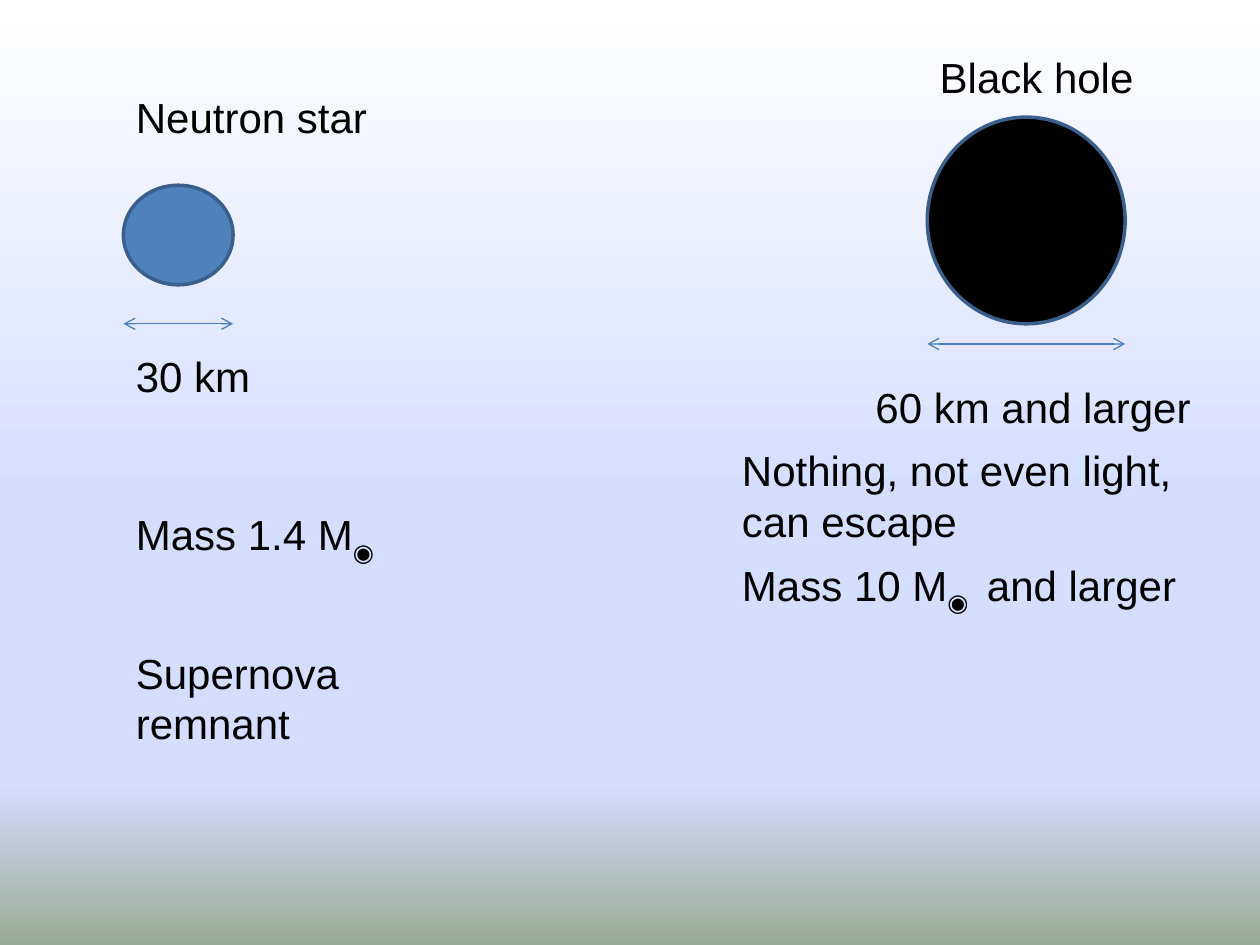
"""Build a slide that compares a neutron star with a black hole."""
from lxml import etree
from pptx import Presentation
from pptx import util as u
from pptx.dml.color import RGBColor
from pptx.enum import shapes, text
from pptx.oxml.ns import qn

BLACK = RGBColor(0x00, 0x00, 0x00)
STAR_BLUE = RGBColor(0x4F, 0x81, 0xBD)
OUTLINE_BLUE = RGBColor(0x3A, 0x5F, 0x8C)
ARROW_BLUE = RGBColor(0x4B, 0x7E, 0xBC)
SKY = RGBColor(0xD4, 0xDE, 0xFF)
SKY_STOPS = [
    (0, RGBColor(0xFF, 0xFF, 0xFF)),
    (53, SKY),
    (83, SKY),
    (100, RGBColor(0x96, 0xAB, 0x94)),
]
SUN = "◉"
STAR_LEFT = 0.98
HOLE_LEFT = 7.36
FACTS_LEFT = 5.79


def paint_background(slide, stops):
    """Fill the background with a gradient running from top to bottom."""
    fill = slide.background.fill
    fill.gradient()
    fill.gradient_angle = 270
    stop_list = next(slide.element.iter(qn("a:gsLst")))
    for old_stop in list(stop_list):
        stop_list.remove(old_stop)
    for percent, color in stops:
        stop = etree.SubElement(stop_list, qn("a:gs"), pos=str(percent * 1000))
        etree.SubElement(stop, qn("a:srgbClr"), val=str(color))


def add_label(slide, lines, left, top, width, height=0.5, size=24,
              font="Arial", color=BLACK):
    """Add a label; each line is a list of runs, those with the sun sign lowered."""
    label = slide.shapes.add_textbox(*map(u.Inches, (left, top, width, height)))
    frame = label.text_frame
    frame.word_wrap = False
    frame.auto_size = text.MSO_AUTO_SIZE.SHAPE_TO_FIT_TEXT
    for index, line in enumerate(lines):
        paragraph = frame.add_paragraph() if index else frame.paragraphs[0]
        for part in line:
            run = paragraph.add_run()
            run.text = part
            run.font.size = u.Pt(size)
            run.font.name = font
            run.font.color.rgb = color
            if SUN in part:
                run.font._element.set("baseline", "-25000")


def add_body(slide, left, top, width, height, color):
    """Add the outlined disc of a celestial body."""
    body = slide.shapes.add_shape(
        shapes.MSO_SHAPE.OVAL, *map(u.Inches, (left, top, width, height)))
    body.shadow.inherit = False
    body.fill.solid()
    body.fill.fore_color.rgb = color
    body.line.color.rgb = OUTLINE_BLUE
    body.line.width = u.Pt(2)


def add_diameter(slide, left, top, width):
    """Add a horizontal arrow with a head at both ends."""
    diameter = slide.shapes.add_connector(
        shapes.MSO_CONNECTOR.STRAIGHT,
        *map(u.Inches, (left, top, left + width, top)))
    diameter.line.color.rgb = ARROW_BLUE
    diameter.line.width = u.Pt(0.75)
    outline = diameter.line._get_or_add_ln()
    for end in ("a:headEnd", "a:tailEnd"):
        etree.SubElement(outline, qn(end), type="arrow")
    etree.SubElement(diameter._element.spPr, qn("a:effectLst"))


def add_neutron_star(slide):
    """Add the neutron star with its size, mass and origin."""
    add_body(slide, STAR_LEFT, 1.47, 0.87, 0.79, STAR_BLUE)
    add_label(slide, [["Neutron star"]], STAR_LEFT, 0.68, 2.05)
    add_diameter(slide, STAR_LEFT, 2.57, 0.87)
    add_label(slide, [["30 km"]], STAR_LEFT, 2.73, 1.12)
    add_label(slide, [["Mass 1.4 M", SUN]], STAR_LEFT, 3.99, 2.2)
    add_label(slide, [["Supernova"], ["remnant"]], STAR_LEFT, 5.09, 1.83, 0.91)


def add_black_hole(slide):
    """Add the black hole with its size, mass and behaviour."""
    add_body(slide, HOLE_LEFT, 0.93, 1.57, 1.64, BLACK)
    add_label(slide, [["Black hole"]], HOLE_LEFT, 0.36, 1.76)
    add_label(slide, [["Nothing, not even light,"], ["can escape"]],
              FACTS_LEFT, 3.48, 3.65, 0.91)
    add_label(slide, [["Mass 10 M", SUN + " ", " and larger"]],
              FACTS_LEFT, 4.39, 3.72)
    add_diameter(slide, HOLE_LEFT, 2.73, 1.57)
    add_label(slide, [["60 km and larger"]], 6.85, 2.98, 2.73)


def main():
    """Build and save the presentation."""
    presentation = Presentation()
    presentation.slide_width = u.Inches(10)
    presentation.slide_height = u.Inches(7.5)
    slide = presentation.slides.add_slide(presentation.slide_layouts[6])
    paint_background(slide, SKY_STOPS)
    add_neutron_star(slide)
    add_black_hole(slide)
    presentation.save("out.pptx")


if __name__ == "__main__":
    main()
